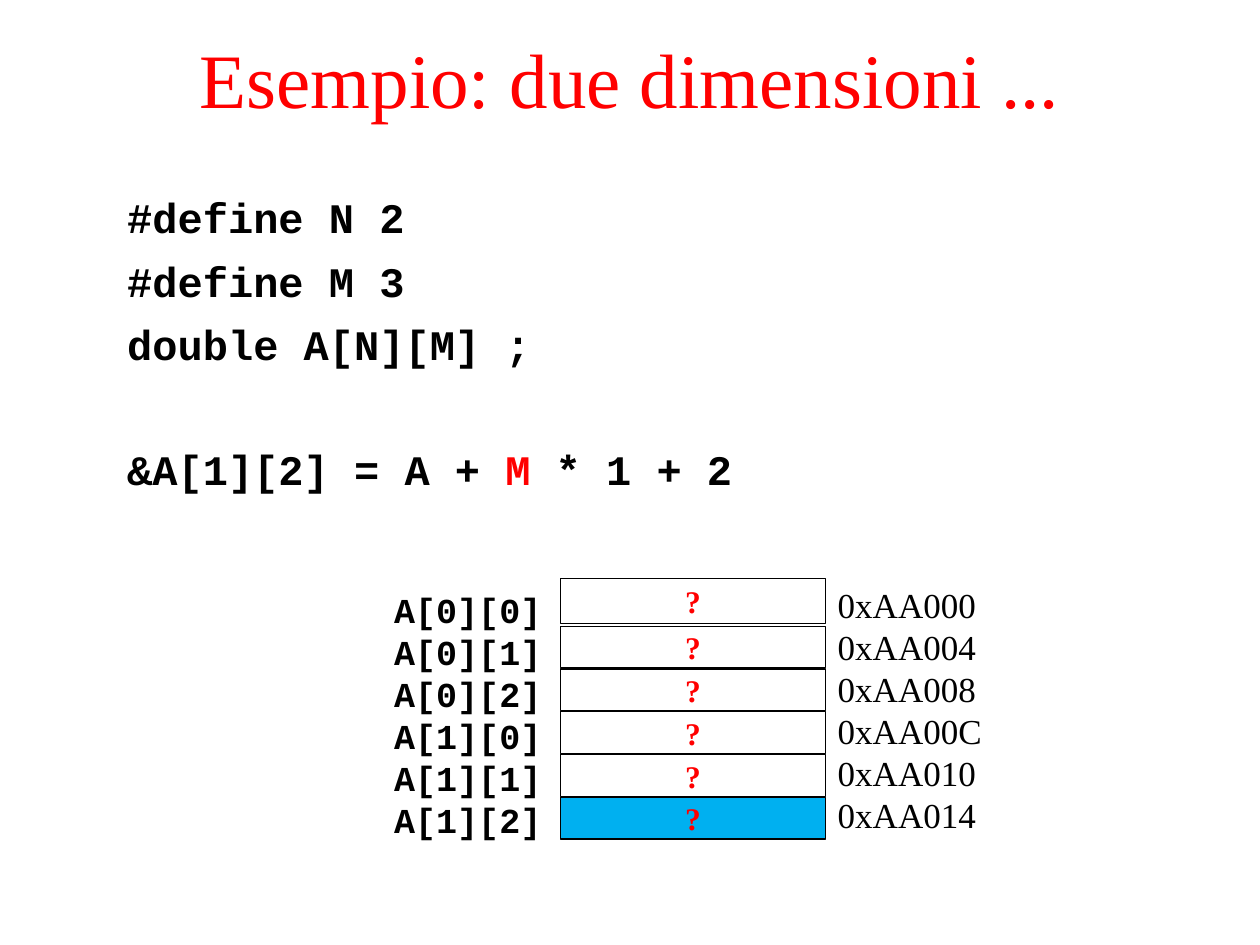
from pptx import Presentation
from pptx.dml.color import RGBColor as Rgb
from pptx.enum.shapes import MSO_SHAPE as Kind
from pptx.enum.text import MSO_ANCHOR as Anchor, MSO_AUTO_SIZE as Fit, PP_ALIGN as Align
from pptx.util import Inches, Pt
from lxml.etree import SubElement as Sub
from pptx.oxml.ns import qn

HUES = {"red": "FF0000", "ink": "000000", "blue": "00B0F0"}
CODE, SERIF = "Courier New", "Times New Roman"
LINES = [
    ["#define N 2"],
    ["#define M 3"],
    ["double A[N][M] ;"],
    ["&A[1][2] = A + ", "M", " * 1 + 2"],
]
ROWS, COLS = 2, 3
CELLS = [f"A[{row}][{col}]" for row in range(ROWS) for col in range(COLS)]
SPOTS = [f"0x{0xAA000 + 4 * i:X}" for i in range(ROWS * COLS)]


def hue(name):
    return Rgb.from_string(HUES[name])


def style(run, face, size, tint="ink", bold=False):
    font = run.font
    font.name, font.size, font.bold = face, Pt(size), bold
    font.color.rgb = hue(tint)


def place(shape, left, top, width, height):
    shape.left, shape.top = Inches(left), Inches(top)
    shape.width, shape.height = Inches(width), Inches(height)


def add_title(slide, text):
    title = slide.shapes.title
    place(title, 0, 0, 10, 1.23)
    frame = title.text_frame
    frame.text = text
    frame.auto_size = Fit.NONE
    frame.vertical_anchor = Anchor.MIDDLE
    para = frame.paragraphs[0]
    para.alignment = Align.CENTER
    style(para.runs[0], SERIF, 44, "red")


def add_code(slide, lines):
    body = slide.placeholders[1]
    place(body, 0.03, 1.47, 6.31, 5.27)
    frame = body.text_frame
    frame.text = "\n".join("" for _ in lines)
    frame.auto_size = Fit.NONE
    for para, parts in zip(frame.paragraphs, lines):
        para.level = 1
        para.space_before, para.space_after = Pt(6), Pt(1.5)
        props = para._p.get_or_add_pPr()
        props.set("marL", str(Inches(0.88)))
        props.set("indent", "0")
        Sub(props, qn("a:buNone"))
        for part in parts:
            run = para.add_run()
            run.text = part
            style(run, CODE, 24, "red" if part == "M" else "ink", True)
    frame.paragraphs[-1].space_before = Pt(40.75)


def add_list(slide, left, top, items, face, bold):
    box = slide.shapes.add_textbox(Inches(left), Inches(top), Inches(1.42), Inches(2.12))
    frame = box.text_frame
    frame.word_wrap = True
    frame.text = "\n".join(items)
    for para in frame.paragraphs:
        para.line_spacing = Pt(24)
        style(para.runs[0], face, 20, bold=bold)


def add_cell(slide, top, height, fill=None):
    cell = slide.shapes.add_shape(
        Kind.RECTANGLE, Inches(4.45), Inches(top), Inches(2.1), Inches(height))
    cell.shadow.inherit = False
    if fill:
        cell.fill.solid()
        cell.fill.fore_color.rgb = hue(fill)
    else:
        cell.fill.background()
    cell.line.color.rgb = hue("ink")
    cell.line.width = Pt(0.75)
    frame = cell.text_frame
    frame.text = "?"
    frame.vertical_anchor = Anchor.MIDDLE
    para = frame.paragraphs[0]
    para.alignment = Align.CENTER
    style(para.runs[0], SERIF, 18, "red", True)


def main():
    deck = Presentation()
    deck.slide_width, deck.slide_height = Inches(10), Inches(7.5)
    slide = deck.slides.add_slide(deck.slide_layouts[1])
    add_title(slide, "Esempio: due dimensioni ...")
    add_code(slide, LINES)
    add_cell(slide, 4.59, 0.36)
    last = len(CELLS) - 1
    for i in range(last):
        add_cell(slide, 4.97 + 0.34 * i, 0.33, "blue" if i == last - 1 else None)
    add_list(slide, 3.03, 4.62, CELLS, CODE, True)
    add_list(slide, 6.55, 4.58, SPOTS, SERIF, False)
    deck.save("out.pptx")


if __name__ == "__main__":
    main()
